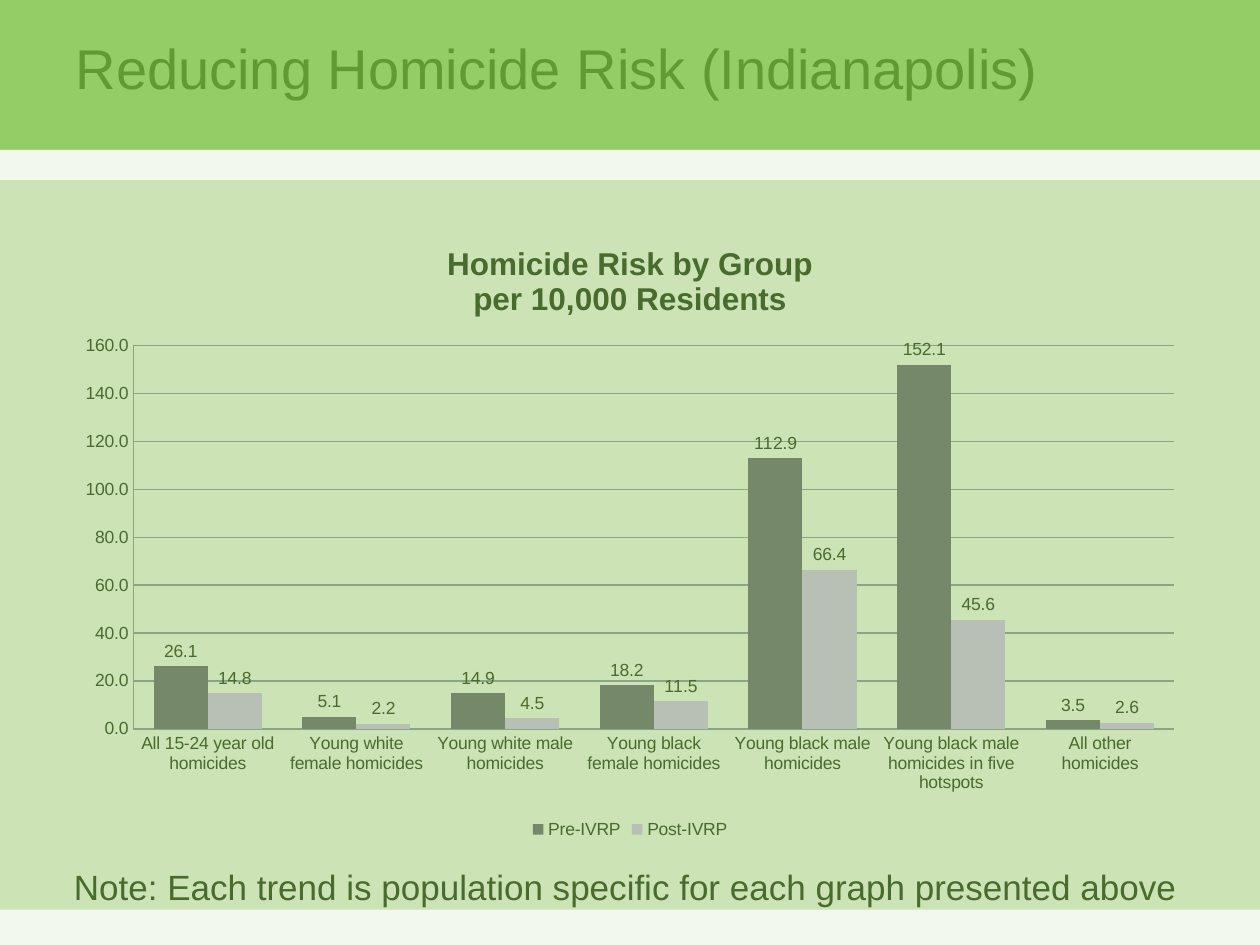
from pptx import Presentation
from pptx.chart.data import CategoryChartData
from pptx.dml.color import RGBColor
from pptx.enum.chart import XL_CHART_TYPE, XL_LABEL_POSITION, XL_LEGEND_POSITION, XL_TICK_MARK
from pptx.enum.shapes import MSO_SHAPE
from pptx.enum.text import MSO_ANCHOR, PP_ALIGN
from pptx.util import Cm, Pt

COLORS = {
    "page": "CCE3B5",
    "band": "94CC66",
    "strip": "F2F8ED",
    "title": "619933",
    "text": "496B2E",
    "grid": "8AA583",
    "pre": "75886A",
    "post": "B8BFB5",
}
FONT = "Arial"
CATEGORIES = [
    "All 15-24 year old homicides",
    "Young white female homicides",
    "Young white male homicides",
    "Young black female homicides",
    "Young black male homicides",
    "Young black male homicides in five hotspots",
    "All other homicides",
]
SERIES = [
    ("Pre-IVRP", "pre", [26.1, 5.1, 14.9, 18.2, 112.9, 152.1, 3.5]),
    ("Post-IVRP", "post", [14.8, 2.2, 4.5, 11.5, 66.4, 45.6, 2.6]),
]
CHART_TITLE = ["Homicide Risk by Group", "per 10,000 Residents"]


class Deck:
    def __init__(self, width, height):
        self.prs = Presentation()
        self.prs.slide_width, self.prs.slide_height = Cm(width), Cm(height)

    def color(self, name):
        return RGBColor.from_string(COLORS[name])

    def fill(self, fmt, color):
        fmt.solid()
        fmt.fore_color.rgb = self.color(color)

    def font(self, font, size, color, bold=False):
        font.name, font.size, font.bold = FONT, Pt(size), bold
        font.color.rgb = self.color(color)

    def slide(self, background):
        self.s = self.prs.slides.add_slide(self.prs.slide_layouts[5])
        self.fill(self.s.background.fill, background)

    def band(self, top, height, color):
        sp = self.s.shapes.add_shape(
            MSO_SHAPE.RECTANGLE, 0, Cm(top), self.prs.slide_width, Cm(height))
        sp.shadow.inherit = False
        self.fill(sp.fill, color)
        sp.line.fill.background()

    def title(self, text, left, top, width, height):
        sp = self.s.shapes.title
        sp.left, sp.top, sp.width, sp.height = map(Cm, (left, top, width, height))
        tf = sp.text_frame
        tf.text = text
        tf.vertical_anchor = MSO_ANCHOR.MIDDLE
        p = tf.paragraphs[0]
        p.alignment = PP_ALIGN.LEFT
        self.font(p.font, 32, "title")
        self.s.shapes._spTree.append(sp._element)

    def text(self, text, left, top, width, height):
        sp = self.s.shapes.add_textbox(*map(Cm, (left, top, width, height)))
        tf = sp.text_frame
        tf.word_wrap = False
        p = tf.paragraphs[0]
        p.text = text
        self.font(p.font, 20, "text")

    def chart(self, title, categories, series, left, top, width, height):
        data = CategoryChartData(number_format="0.0")
        data.categories = categories
        for name, _, values in series:
            data.add_series(name, values)
        chart = self.s.shapes.add_chart(
            XL_CHART_TYPE.COLUMN_CLUSTERED,
            *map(Cm, (left, top, width, height)), data).chart
        self.font(chart.font, 10, "text")
        self.chart_title(chart, title)
        chart.has_legend = True
        chart.legend.position = XL_LEGEND_POSITION.BOTTOM
        chart.legend.include_in_layout = False
        for axis in (chart.category_axis, chart.value_axis):
            axis.major_tick_mark = axis.minor_tick_mark = XL_TICK_MARK.NONE
            self.line(axis.format.line)
        axis = chart.value_axis
        axis.minimum_scale, axis.maximum_scale, axis.major_unit = 0, 160, 20
        axis.tick_labels.number_format = "0.0"
        axis.tick_labels.number_format_is_linked = False
        self.line(axis.major_gridlines.format.line)
        plot = chart.plots[0]
        plot.gap_width, plot.overlap = 75, 0
        plot.vary_by_categories = False
        for ser, (_, color, _) in zip(plot.series, series):
            self.fill(ser.format.fill, color)
            ser.invert_if_negative = False
            labels = ser.data_labels
            labels.show_value = True
            labels.number_format = "0.0"
            labels.number_format_is_linked = False
            labels.position = XL_LABEL_POSITION.OUTSIDE_END

    def chart_title(self, chart, lines):
        chart.has_title = True
        chart.chart_title.include_in_layout = False
        tf = chart.chart_title.text_frame
        tf.text = "\n".join(lines)
        for p in tf.paragraphs:
            self.font(p.font, 18, "text", bold=True)

    def line(self, line):
        line.width = Pt(0.75)
        line.color.rgb = self.color("grid")


def main():
    deck = Deck(25.4, 19.05)
    deck.slide("page")
    deck.band(0, 3.33, "band")
    deck.band(17.53, 0.76, "page")
    deck.band(3.02, 0.61, "strip")
    deck.band(18.34, 0.71, "strip")
    deck.title("Reducing Homicide Risk (Indianapolis)", 1.27, 0, 22.89, 2.72)
    deck.text("Note: Each trend is population specific for each graph presented above",
              1.24, 17.32, 22.91, 1.12)
    deck.chart(CHART_TITLE, CATEGORIES, SERIES, 1.27, 4.45, 22.86, 12.57)
    deck.prs.save("out.pptx")


if __name__ == "__main__":
    main()
